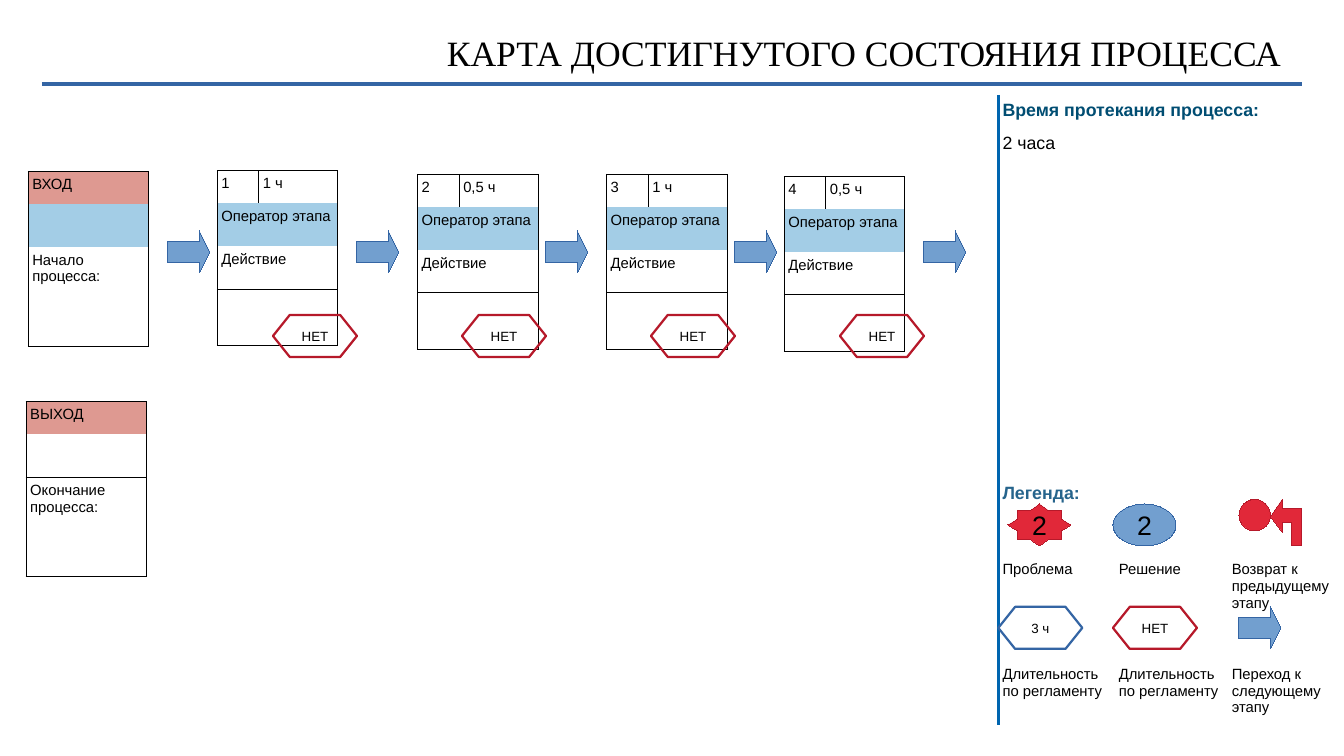
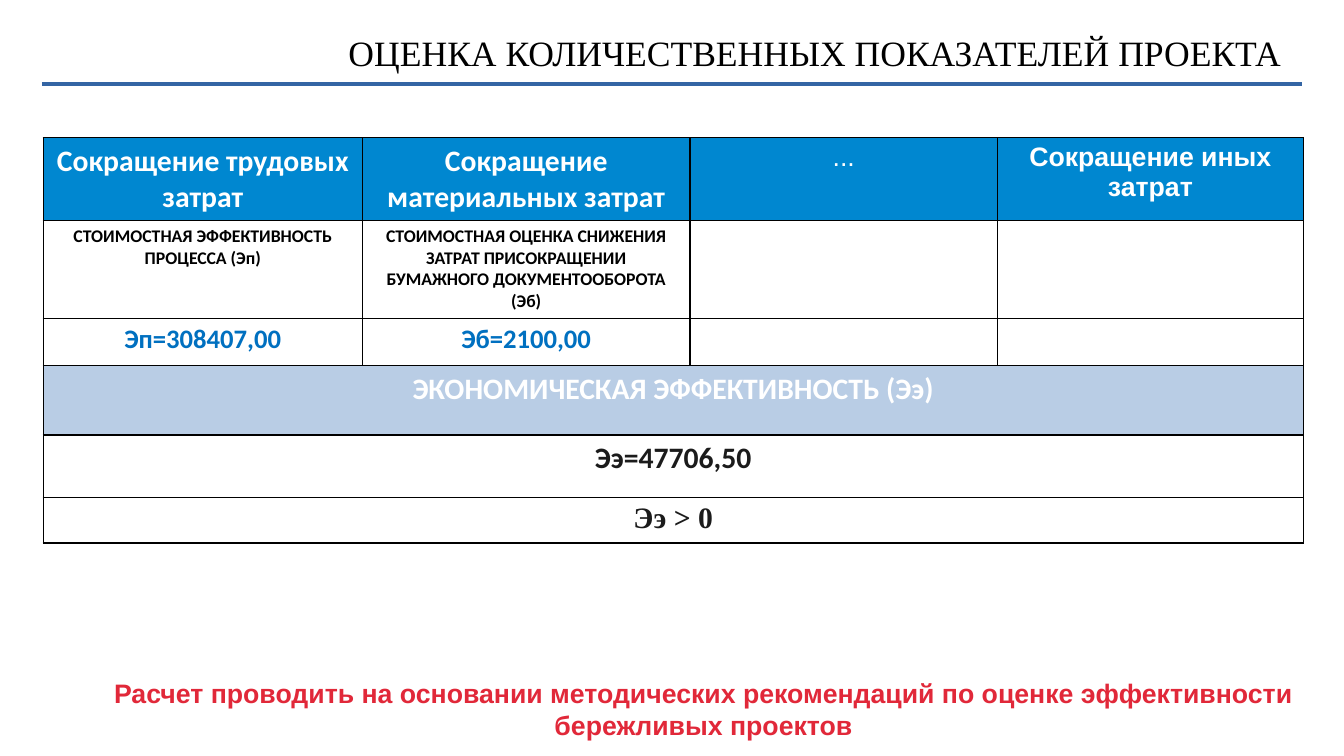
from lxml import etree
from pptx import Presentation
from pptx.dml.color import RGBColor
from pptx.enum.shapes import MSO_CONNECTOR, MSO_SHAPE
from pptx.enum.text import MSO_ANCHOR, PP_ALIGN
from pptx.oxml.ns import qn
from pptx.util import Cm, Emu, Pt

STRAIGHT = MSO_CONNECTOR.STRAIGHT
ARROW = MSO_SHAPE.RIGHT_ARROW
HEXAGON = MSO_SHAPE.FLOWCHART_PREPARATION
OVAL = MSO_SHAPE.OVAL
STAR = MSO_SHAPE.STAR_8_POINT
LEFT, CENTER, RIGHT = PP_ALIGN.LEFT, PP_ALIGN.CENTER, PP_ALIGN.RIGHT
TOP, MIDDLE, BOTTOM = MSO_ANCHOR.TOP, MSO_ANCHOR.MIDDLE, MSO_ANCHOR.BOTTOM
HAIRLINE = Emu(1)

COLORS = {
    "black": "000000", "white": "FFFFFF", "ink": "1B1B1B",
    "rule": "3465A4", "divider": "0065AF", "blue": "729FCF",
    "red": "E12839", "dark red": "B6192A",
    "heading": "004D72", "legend": "26648C",
    "gate": "DE9991", "operator": "A3CDE6",
    "header": "0087D0", "band": "B9CDE5", "value": "0070C0",
}
STYLES = {
    "title": ("Times New Roman", 24, "black", False),
    "heading": ("Arial", 12, "heading", True),
    "time": ("Arial", 12, "black", False),
    "legend": ("Arial", 12, "legend", True),
    "small": ("Arial", 10, "black", False),
    "tag": ("Arial", 9, "black", False),
    "number": ("Arial", 18, "black", False),
    "note": ("Arial", 18, "red", True),
    "header": ("Calibri", 20, "white", True),
    "dots": ("Arial", 18, "white", False),
    "other header": ("Arial", 18, "white", True),
    "name": ("Calibri", 12, "black", True),
    "value": ("Calibri", 18, "value", True),
    "total": ("Calibri", 20, "ink", True),
    "condition": ("Times New Roman", 20, "ink", True),
}
SIDES = {"l": "a:lnL", "r": "a:lnR", "t": "a:lnT", "b": "a:lnB"}
EMPTY = ("", None, None)

MAP_TITLE = "КАРТА ДОСТИГНУТОГО СОСТОЯНИЯ ПРОЦЕССА"
STEPS = [
    ("1", "1 ч", 5.17, 4.06),
    ("2", "0,5 ч", 9.94, 4.15),
    ("3", "1 ч", 14.44, 4.15),
    ("4", "0,5 ч", 18.67, 4.2),
]
GATES = [
    ("ВХОД", "Начало процесса:", 0.67, 4.08, "operator", "lr", "lrb"),
    ("ВЫХОД", "Окончание процесса:", 0.62, 9.56, None, "lrb", "ltrb"),
]
PITCH = 4.5
ARROW_START, ARROW_TOP = 4, 5.5
TAG_START, TAG_TOP = 6.5, 7.5

PANEL_LEFT, PANEL_TOP = 23.77, 2.26
PANEL_ROWS = [
    (0.8, "l", [("Время протекания процесса:", "heading", None)]),
    (0.94, "l", [("2 часа", "time", None)]),
    (0.75, "l", [EMPTY]),
    (7.34, "l", [("Легенда:", "legend", None)]),
    (1.15, "l", [EMPTY] * 3),
    (1.55, "l", [(text, "small", None) for text in
                 ("Проблема", "Решение", "Возврат к предыдущему этапу")]),
    (0.94, "l", [EMPTY] * 3),
    (1.45, "l", [(text, "small", None) for text in
                 ("Длительность по регламенту", "Длительность по регламенту",
                  "Переход к следующему этапу")]),
]
LEGEND_TAGS = [("3 ч", PANEL_LEFT, "rule"), ("НЕТ", 26.5, "dark red")]
LEGEND_TAG_TOP = 14.45
RETURN_ARROW = [
    (30.25, 12.3), (30.53, 11.89), (30.53, 12.12), (31, 12.12), (31, 13),
    (30.75, 13), (30.75, 12.45), (30.53, 12.45), (30.53, 12.67),
]

SCORE_TITLE = "ОЦЕНКА КОЛИЧЕСТВЕННЫХ ПОКАЗАТЕЛЕЙ ПРОЕКТА"
SCORE_WIDTHS = [7.6, 7.8, 7.32, 7.28]
SCORE_ROWS = [
    (1.97, "ltrb", [
        ("Сокращение трудовых затрат", "header", "header"),
        ("Сокращение материальных затрат", "header", "header"),
        ("...", "dots", "header"),
        ("Сокращение иных затрат", "other header", "header")]),
    (2.33, "ltrb", [
        ("СТОИМОСТНАЯ ЭФФЕКТИВНОСТЬ ПРОЦЕССА (Эп)", "name", None),
        ("СТОИМОСТНАЯ ОЦЕНКА СНИЖЕНИЯ ЗАТРАТ ПРИСОКРАЩЕНИИ "
         "БУМАЖНОГО ДОКУМЕНТООБОРОТА (Эб)", "name", None),
        ("", None, "white"), ("", None, "white")]),
    (1.13, "ltrb", [("Эп=308407,00", "value", None),
                    ("Эб=2100,00", "value", None), EMPTY, EMPTY]),
    (1.65, "ltrb", [("ЭКОНОМИЧЕСКАЯ ЭФФЕКТИВНОСТЬ (Ээ)", "header", "band")]),
    (1.48, "ltrb", [("Ээ=47706,50", "total", None)]),
    (1.04, "ltrb", [("Ээ > 0", "condition", None)]),
]
SCORE_NOTE = ("Расчет проводить на основании методических рекомендаций "
              "по оценке эффективности бережливых проектов")


def rgb(name):
    return RGBColor.from_string(COLORS[name])


def write(frame, text, style, align):
    font_name, size, color, bold = STYLES[style]
    paragraph = frame.paragraphs[0]
    paragraph.alignment = align
    run = paragraph.add_run()
    run.text = text
    run.font.name = font_name
    run.font.size = Pt(size)
    run.font.bold = bold
    run.font.color.rgb = rgb(color)


def set_margins(target, horizontal, vertical):
    target.margin_left = target.margin_right = Cm(horizontal)
    target.margin_top = target.margin_bottom = Cm(vertical)


def add_text(slide, box, text, style, align, anchor, margins):
    frame = slide.shapes.add_textbox(*map(Cm, box)).text_frame
    frame.word_wrap = True
    frame.vertical_anchor = anchor
    set_margins(frame, *margins)
    write(frame, text, style, align)


def paint(shape, fill, line, width=HAIRLINE):
    shape.shadow.inherit = False
    if fill:
        shape.fill.solid()
        shape.fill.fore_color.rgb = rgb(fill)
    else:
        shape.fill.background()
    shape.line.color.rgb = rgb(line)
    shape.line.width = width


def add_mark(slide, kind, box, fill, line, width=HAIRLINE, text="",
             style="number"):
    shape = slide.shapes.add_shape(kind, *map(Cm, box))
    paint(shape, fill, line, width)
    if text:
        frame = shape.text_frame
        frame.word_wrap = False
        frame.vertical_anchor = MIDDLE
        set_margins(frame, 0, 0)
        write(frame, text, style, CENTER)
    return shape


def add_arrow(slide, left, top):
    arrow = add_mark(slide, ARROW, (left, top, 1, 1), "blue", "rule")
    arrow.adjustments[0] = 0.5
    arrow.adjustments[1] = 0.25


def add_tag(slide, left, top, text, color):
    add_mark(slide, HEXAGON, (left, top, 2, 1), None, color, Pt(1.5), text, "tag")


def set_borders(cell, sides, color, width):
    properties = cell._tc.get_or_add_tcPr()
    for side, tag in SIDES.items():
        line = etree.SubElement(properties, qn(tag), w=str(Pt(width)))
        if side in sides:
            fill = etree.SubElement(line, qn("a:solidFill"))
            etree.SubElement(fill, qn("a:srgbClr"), val=COLORS[color])
        else:
            etree.SubElement(line, qn("a:noFill"))


def add_grid(slide, left, top, widths, rows, border=("black", 0.57),
             margins=(0.1, 0.12), align=LEFT, first_only=False):
    total = sum(row[0] for row in rows)
    table = slide.shapes.add_table(
        len(rows), len(widths), Cm(left), Cm(top),
        Cm(sum(widths)), Cm(total)).table
    table.first_row = table.horz_banding = False
    for column, width in zip(table.columns, widths):
        column.width = Cm(width)
    for i, (height, sides, contents) in enumerate(rows):
        table.rows[i].height = Cm(height)
        for j in range(len(widths)):
            cell = table.cell(i, j)
            spanned = j >= len(contents)
            cell_sides = sides.replace("l", "") if spanned else sides
            set_borders(cell, "" if first_only and j else cell_sides, *border)
            text, style, fill = EMPTY if spanned else contents[j]
            if fill:
                cell.fill.solid()
                cell.fill.fore_color.rgb = rgb(fill)
            else:
                cell.fill.background()
            set_margins(cell, *(margins if text else (0, 0)))
            cell.vertical_anchor = BOTTOM if style == "legend" else TOP
            if text:
                write(cell.text_frame, text, style, align)
        if len(contents) < len(widths):
            table.cell(i, len(contents) - 1).merge(table.cell(i, len(widths) - 1))


def add_slide(presentation, title):
    slide = presentation.slides.add_slide(presentation.slide_layouts[6])
    rule = slide.shapes.add_connector(STRAIGHT, Cm(1), Cm(2), Cm(31), Cm(2))
    rule.line.color.rgb = rgb("rule")
    rule.line.width = Pt(3)
    etree.SubElement(rule._element.spPr, qn("a:effectLst"))
    add_text(slide, (1.7, 0, 28.8, 2.5), title, "title", RIGHT, MIDDLE, (0, 0))
    return slide


def add_legend(slide):
    add_grid(slide, PANEL_LEFT, PANEL_TOP, [2.77, 2.69, 2.54], PANEL_ROWS,
             border=("divider", 2.55), first_only=True)
    add_mark(slide, STAR, (24, 12, 1.5, 1), "red", "dark red", text="2")
    add_mark(slide, OVAL, (26.5, 12, 1.5, 1), "blue", "rule", text="2")
    add_mark(slide, OVAL, (29.5, 11.89, 0.75, 0.75), "red", "dark red")
    points = [(Cm(x), Cm(y)) for x, y in RETURN_ARROW]
    builder = slide.shapes.build_freeform(*points[0])
    builder.add_line_segments(points[1:], close=True)
    paint(builder.convert_to_shape(), "red", "dark red")
    for text, left, color in LEGEND_TAGS:
        add_tag(slide, left, LEGEND_TAG_TOP, text, color)
    add_arrow(slide, 29.5, LEGEND_TAG_TOP)


def build_map(presentation):
    slide = add_slide(presentation, MAP_TITLE)
    add_legend(slide)
    for name, note, left, top, fill, middle_sides, last_sides in GATES:
        add_grid(slide, left, top, [2.87], [
            (0.78, "ltr", [(name, "small", "gate")]),
            (1.02, middle_sides, [("", None, fill)]),
            (2.37, last_sides, [(note, "small", None)])])
    for number, duration, left, top in STEPS:
        add_grid(slide, left, top, [0.99, 1.88], [
            (0.78, "ltr", [(number, "small", None), (duration, "small", None)]),
            (1.02, "lr", [("Оператор этапа", "small", "operator")]),
            (1.02, "lrb", [("Действие", "small", None)]),
            (1.35, "ltrb", [EMPTY])])
    for i in range(len(STEPS) + 1):
        add_arrow(slide, ARROW_START + i * PITCH, ARROW_TOP)
    for i in range(len(STEPS)):
        add_tag(slide, TAG_START + i * PITCH, TAG_TOP, "НЕТ", "dark red")


def build_score(presentation):
    slide = add_slide(presentation, SCORE_TITLE)
    add_text(slide, (2, 15.98, 29.5, 1.68), SCORE_NOTE, "note", CENTER, TOP,
             (0.25, 0.13))
    add_grid(slide, 1.03, 3.28, SCORE_WIDTHS, SCORE_ROWS,
             border=("black", 0.96), margins=(0.25, 0.12), align=CENTER)


def main():
    presentation = Presentation()
    presentation.slide_width = Cm(32)
    presentation.slide_height = Cm(18)
    build_map(presentation)
    build_score(presentation)
    presentation.save("out.pptx")


if __name__ == "__main__":
    main()
